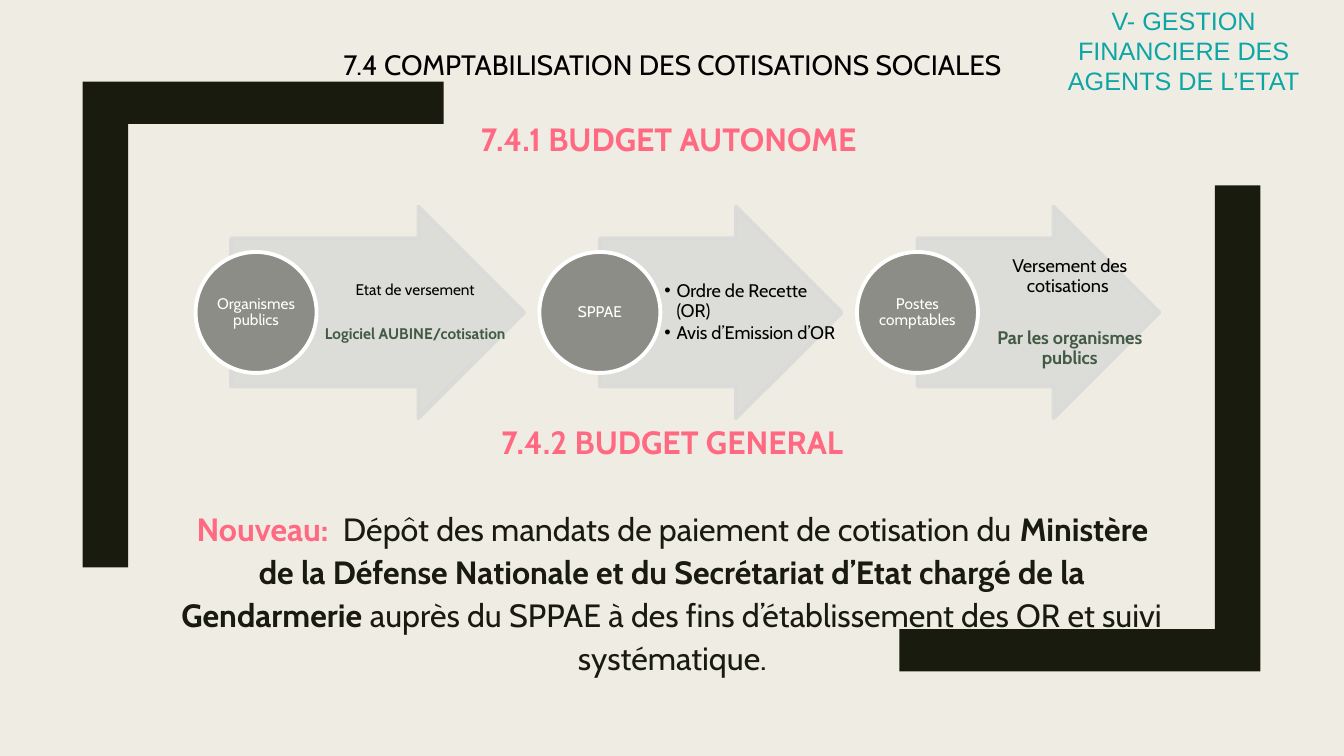
from lxml.etree import SubElement
from pptx import Presentation
from pptx.dml.color import RGBColor
from pptx.enum.shapes import MSO_SHAPE
from pptx.enum.text import MSO_ANCHOR, PP_ALIGN
from pptx.oxml.ns import qn
from pptx.util import Inches, Pt

CREAM = RGBColor(0xEF, 0xED, 0xE3)
DARK = RGBColor(0x19, 0x1B, 0x0E)
SILVER = RGBColor(0xDA, 0xDB, 0xD9)
GREY = RGBColor(0x8C, 0x8D, 0x86)
WHITE = RGBColor(0xFF, 0xFF, 0xFF)
BLACK = RGBColor(0, 0, 0)
GREEN = RGBColor(0x42, 0x5A, 0x43)
PINK = RGBColor(0xFF, 0x69, 0x82)
TEAL = RGBColor(0x0D, 0xA5, 0xA5)

# Each line: space before in points, then runs of (text, size, colour, bold)
BODY = [
    (0, [("7.4 COMPTABILISATION DES COTISATIONS SOCIALES", 20, BLACK, False)]),
    (24.2, [("7.4.1 BUDGET AUTONOME ", 23, PINK, True)]),
    (185.5, [("7.4.2 BUDGET GENERAL", 23, PINK, True)]),
    (31, [
        ("Nouveau: ", 23, PINK, True),
        (" Dépôt des mandats de paiement de cotisation du ", 23, DARK, False),
        ("Ministère de la Défense Nationale et du Secrétariat d’Etat "
         "chargé de la Gendarmerie", 23, DARK, True),
        (" auprès du SPPAE à des fins d’établissement des OR et suivi "
         "systématique.", 23, DARK, False),
    ]),
]
CHAPTER = "V- GESTION FINANCIERE DES AGENTS DE L’ETAT"

# Actor, arrow width, text size, bulleted, lines of (text, colour, bold)
STAGES = [
    ("Organismes publics", 2.91, 11, False,
     [("Etat de versement", BLACK, False),
      ("Logiciel AUBINE/cotisation", GREEN, True)]),
    ("SPPAE", 2.4, 13, True,
     [("Ordre de Recette (OR)", BLACK, False),
      ("Avis d’Emission d’OR", BLACK, False)]),
    ("Postes comptables", 2.4, 13, False,
     [("Versement des cotisations ", BLACK, False),
      ("Par les organismes publics", GREEN, True)]),
]
CIRCLE_LEFTS = [1.94, 5.35, 8.5]
FIRST_TIP, STAGE_PITCH = 5.2, 3.15
ARROW_TOP, ARROW_HEIGHT, DIAMETER = 2.05, 2.1, 1.2
ARM_WIDTH, ARM_HEIGHT, BAR_WIDTH, BAR_HEIGHT = 3.58, 4.82, 0.45, 0.42

deck = Presentation()
deck.slide_width, deck.slide_height = Inches(13.33), Inches(7.5)
page = deck.slides.add_slide(deck.slide_layouts[6])
page.background.fill.solid()
page.background.fill.fore_color.rgb = CREAM


def set_frame(frame, insets, anchor):
    frame.word_wrap = True
    frame.vertical_anchor = anchor
    (frame.margin_left, frame.margin_top,
     frame.margin_right, frame.margin_bottom) = map(Inches, insets)


def add_box(left, top, width, height, insets, anchor=MSO_ANCHOR.TOP):
    box = page.shapes.add_textbox(*map(Inches, (left, top, width, height)))
    set_frame(box.text_frame, insets, anchor)
    return box.text_frame


def add_span(para, text, size, color, bold=False, font="Cabin"):
    span = para.add_run()
    span.text = text
    span.font.name, span.font.size, span.font.bold = font, Pt(size), bold
    span.font.color.rgb = color


def next_paragraph(frame, index):
    return frame.add_paragraph() if index else frame.paragraphs[0]


def paint(shape, fill, line=None):
    shape.shadow.inherit = False
    shape.fill.solid()
    shape.fill.fore_color.rgb = fill
    if line is None:
        shape.line.fill.background()
    else:
        shape.line.color.rgb = line
        shape.line.width = Pt(2.75)


def add_bracket(x, y, way):
    """Draw an L from its outer corner; way is 1 for right and down, -1 for left and up."""
    steps = [(0, ARM_HEIGHT), (0, 0), (ARM_WIDTH, 0), (ARM_WIDTH, BAR_HEIGHT),
             (BAR_WIDTH, BAR_HEIGHT), (BAR_WIDTH, ARM_HEIGHT)]
    points = [(Inches(x + way * dx), Inches(y + way * dy)) for dx, dy in steps]
    outline = page.shapes.build_freeform(*points[0])
    outline.add_line_segments(points[1:], close=True)
    paint(outline.convert_to_shape(), DARK)


def add_bullet(para):
    properties = para._p.get_or_add_pPr()
    properties.set("marL", str(Inches(0.12)))
    properties.set("indent", str(-Inches(0.12)))
    SubElement(properties, qn("a:buFont")).set("typeface", "Arial")
    SubElement(properties, qn("a:buChar")).set("char", "•")


def add_stage(index, actor, width, size, bulleted, lines):
    left = FIRST_TIP + index * STAGE_PITCH - width
    arrow = page.shapes.add_shape(
        MSO_SHAPE.RIGHT_ARROW,
        *map(Inches, (left, ARROW_TOP, width, ARROW_HEIGHT)))
    arrow.adjustments[0], arrow.adjustments[1] = 0.7, 0.5
    paint(arrow, SILVER, SILVER)
    for color in arrow._element.spPr.iter(qn("a:srgbClr")):
        SubElement(color, qn("a:alpha")).set("val", "90000")

    frame = add_box(left + width / 4, ARROW_TOP, width * 3 / 4, ARROW_HEIGHT,
                    (0.04, 0.01, 0.02, 0.01), MSO_ANCHOR.MIDDLE)
    for row, (text, color, bold) in enumerate(lines):
        para = next_paragraph(frame, row)
        para.alignment = PP_ALIGN.LEFT if bulleted else PP_ALIGN.CENTER
        para.line_spacing = 0.9
        if row:
            para.space_before = Pt(size * (0.15 if bulleted else 1.78))
        if bulleted:
            add_bullet(para)
        add_span(para, text, size, color, bold)

    circle = page.shapes.add_shape(
        MSO_SHAPE.OVAL,
        Inches(CIRCLE_LEFTS[index]),
        Inches(ARROW_TOP + (ARROW_HEIGHT - DIAMETER) / 2),
        Inches(DIAMETER), Inches(DIAMETER))
    paint(circle, GREY, WHITE)
    set_frame(circle.text_frame, (0.01,) * 4, MSO_ANCHOR.MIDDLE)
    label = circle.text_frame.paragraphs[0]
    label.alignment, label.line_spacing = PP_ALIGN.CENTER, 0.9
    add_span(label, actor, 11, WHITE)


add_bracket(12.5, 6.66, -1)
add_bracket(0.82, 0.81, 1)
for number, stage in enumerate(STAGES):
    add_stage(number, *stage)

body = add_box(1.67, 0, 10, 7.5, (0.1, 0.43, 0.1, 0.05))
for number, (gap, spans) in enumerate(BODY):
    para = next_paragraph(body, number)
    para.alignment, para.line_spacing = PP_ALIGN.CENTER, 1.12
    para.space_before = Pt(gap)
    for span in spans:
        add_span(para, *span)

chapter = add_box(10.11, 0, 3.06, 0.71, (0.3, 0.05, 0.1, 0.05))
chapter.paragraphs[0].alignment = PP_ALIGN.CENTER
add_span(chapter.paragraphs[0], CHAPTER, 18, TEAL, font="Arial")

deck.save("out.pptx")
